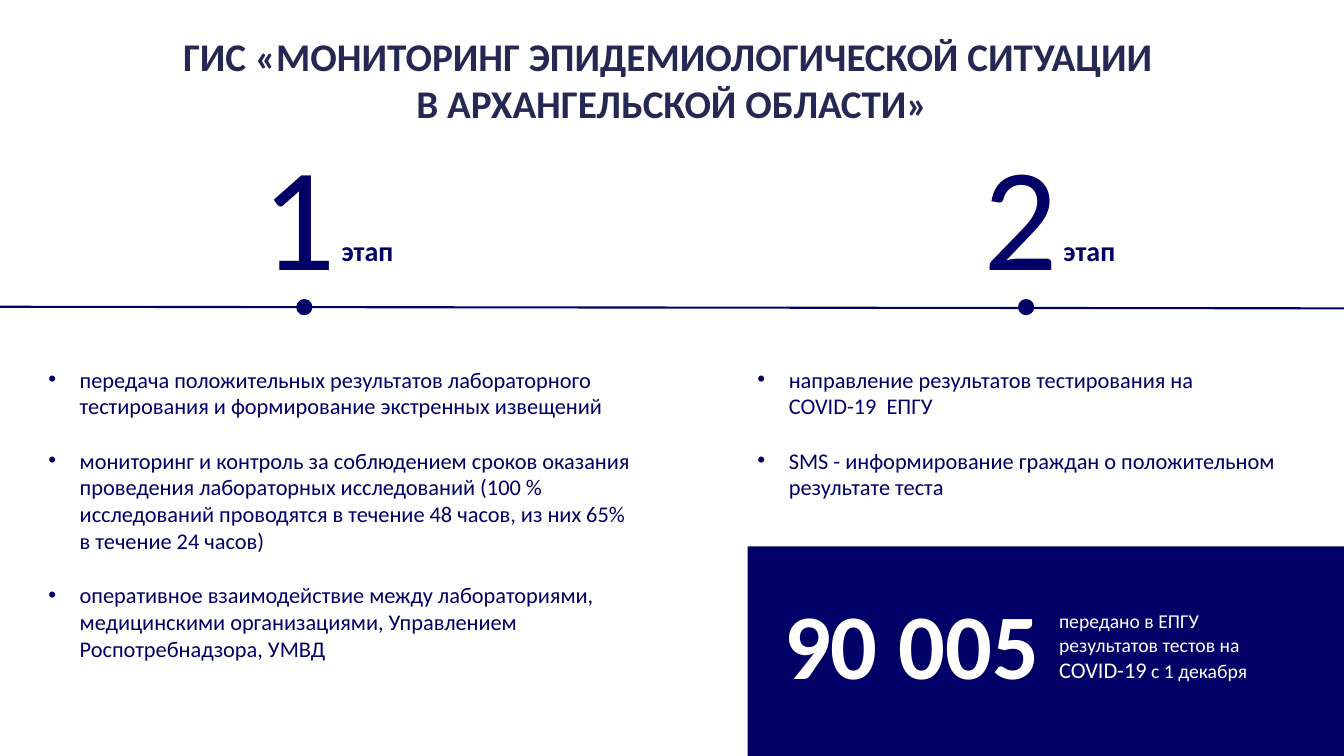
from lxml import etree
from pptx import Presentation
from pptx.dml.color import RGBColor
from pptx.enum.shapes import MSO_CONNECTOR, MSO_SHAPE
from pptx.enum.text import PP_ALIGN
from pptx.oxml.ns import qn
from pptx.util import Cm, Pt

NAVY = RGBColor(0x00, 0x00, 0x66)
TITLE_BLUE = RGBColor(0x24, 0x28, 0x52)
WHITE = RGBColor(0xFF, 0xFF, 0xFF)
FONT = "Calibri"
WIDTH, HEIGHT = 33.87, 19.05

STAGES = [("1", 7.67), ("2", 25.86)]
STAGE_ONE_TASKS = [
    "передача положительных результатов лабораторного тестирования и формирование экстренных извещений",
    "мониторинг и контроль за соблюдением сроков оказания проведения лабораторных исследований "
    "(100 % исследований проводятся в течение 48 часов, из них 65% в течение 24 часов)",
    "оперативное взаимодействие между лабораториями, медицинскими организациями, "
    "Управлением Роспотребнадзора, УМВД",
]
STAGE_TWO_TASKS = [
    "направление результатов тестирования на COVID-19  ЕПГУ",
    "SMS - информирование граждан о положительном результате теста",
]


def set_font(font, size, color, bold=False):
    font.name = FONT
    font.size = Pt(size)
    font.bold = bold
    font.color.rgb = color


def add_text(slide, box, lines, size, color, bold=False, align=PP_ALIGN.LEFT):
    """Add a wrapped text box with one paragraph per line; return its paragraphs."""
    frame = slide.shapes.add_textbox(*map(Cm, box)).text_frame
    frame.word_wrap = True
    for index, line in enumerate(lines):
        paragraph = frame.add_paragraph() if index else frame.paragraphs[0]
        paragraph.text = line
        paragraph.alignment = align
        set_font(paragraph.font, size, color, bold)
    return frame.paragraphs


def add_solid(slide, kind, box):
    shape = slide.shapes.add_shape(kind, *map(Cm, box))
    shape.shadow.inherit = False
    shape.fill.solid()
    shape.fill.fore_color.rgb = NAVY
    shape.line.fill.background()


def add_title(slide, box):
    lines = ["ГИС «МОНИТОРИНГ ЭПИДЕМИОЛОГИЧЕСКОЙ СИТУАЦИИ ", "В АРХАНГЕЛЬСКОЙ ОБЛАСТИ»"]
    add_text(slide, box, lines, 28, TITLE_BLUE, True, PP_ALIGN.CENTER)


def add_timeline(slide, box):
    left, top, width, height = box
    axis = top + height
    # Axis
    line = slide.shapes.add_connector(
        MSO_CONNECTOR.STRAIGHT, Cm(left), Cm(axis - 0.01), Cm(left + width), Cm(axis + 0.03))
    line.line.color.rgb = NAVY
    line.line.width = Pt(1.5)
    etree.SubElement(line._element.spPr, qn("a:effectLst"))
    # Stage markers, numbers and labels
    marker = 0.41
    for number, center in STAGES:
        x = left + center
        add_solid(slide, MSO_SHAPE.OVAL, (x - marker / 2, axis - marker / 2, marker, marker))
        add_text(slide, (x - 1.32, top, 3.02, height), [number], 105, NAVY)
        add_text(slide, (x + 0.69, top + 2.76, 3.38, 1.12), ["этап"], 20, NAVY, True)


def add_tasks(slide, box, tasks):
    paragraphs = add_text(slide, box, tasks, 16, NAVY)
    for paragraph in paragraphs:
        properties = paragraph._p.get_or_add_pPr()
        properties.set("marL", str(Cm(0.79)))
        properties.set("indent", str(-Cm(0.79)))
        bullet_font = etree.SubElement(properties, qn("a:buFont"))
        bullet_font.set("typeface", "Arial")
        etree.SubElement(properties, qn("a:buChar")).set("char", "•")
        # The bullet elements must precede the default run properties
        default_run = properties.find(qn("a:defRPr"))
        if default_run is not None:
            properties.append(default_run)
    for paragraph in paragraphs[:-1]:
        paragraph.space_after = Pt(19.5)


def add_result_panel(slide, box):
    left, top, width, height = box
    add_solid(slide, MSO_SHAPE.RECTANGLE, box)
    # Total
    add_text(slide, (left - 0.07, top + 0.91, 7.67, 3.07), ["90 005"], 66, WHITE, True, PP_ALIGN.RIGHT)
    # Explanation
    paragraph = add_text(slide, (left + 7.6, top + 1.45, 6.5, 2.13), [""], 14, WHITE)[0]
    for text, size in [("передано в ЕПГУ результатов тестов на ", 14),
                       ("COVID-19", 16), (" с 1 декабря", 14)]:
        run = paragraph.add_run()
        run.text = text
        set_font(run.font, size, WHITE)


def main():
    presentation = Presentation()
    presentation.slide_width = Cm(WIDTH)
    presentation.slide_height = Cm(HEIGHT)
    slide = presentation.slides.add_slide(presentation.slide_layouts[6])

    panel_left, panel_top = 18.84, 13.77
    add_title(slide, (0, 0.69, WIDTH, 2.64))
    add_timeline(slide, (0, 2.99, WIDTH, 4.75))
    add_tasks(slide, (0.97, 9.09, 15.42, 7.77), STAGE_ONE_TASKS)
    add_tasks(slide, (panel_left, 9.09, 13.64, 3.68), STAGE_TWO_TASKS)
    add_result_panel(slide, (panel_left, panel_top, WIDTH - panel_left, HEIGHT - panel_top))

    presentation.save("out.pptx")


if __name__ == "__main__":
    main()
